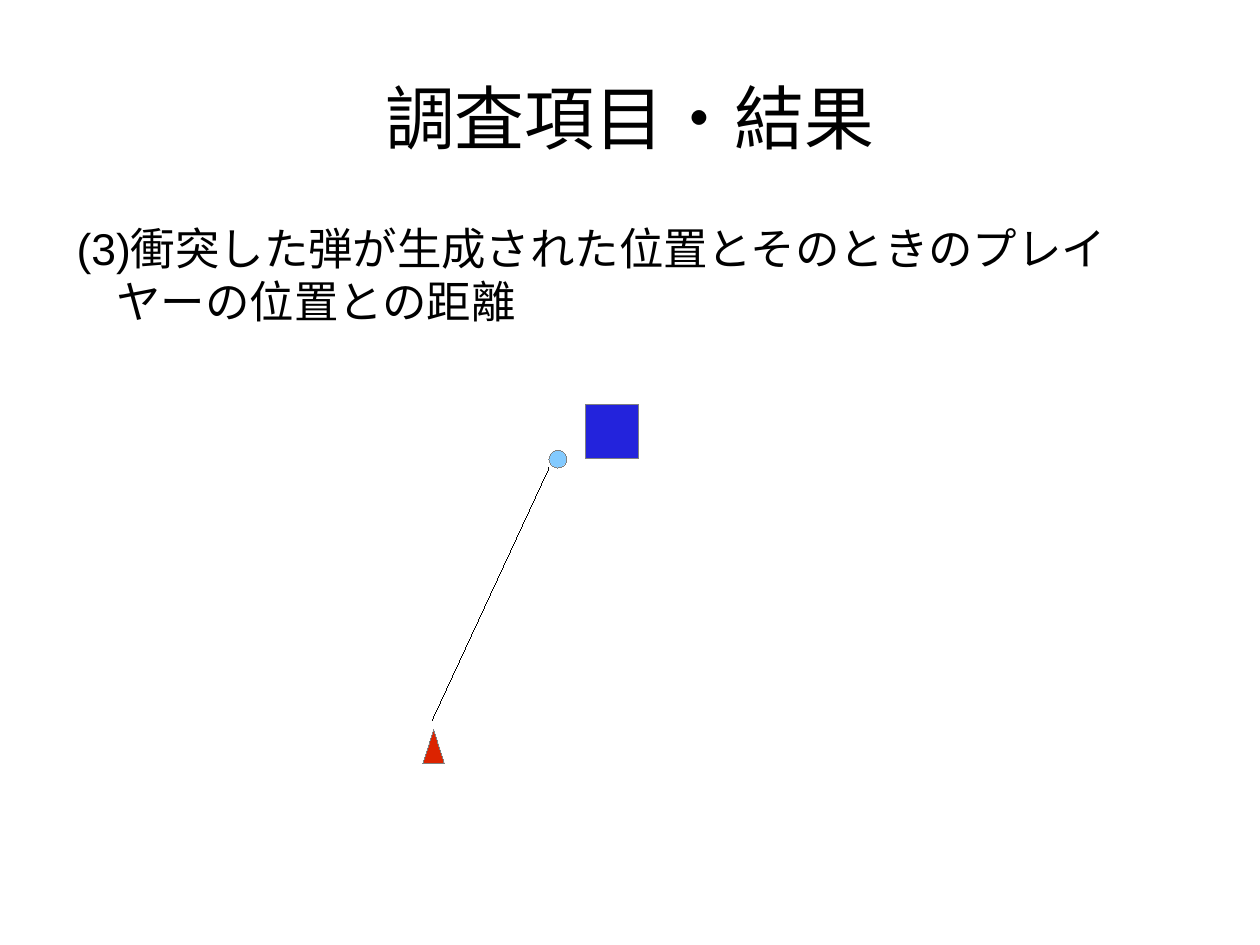
from dataclasses import dataclass

from lxml import etree
from pptx import Presentation
from pptx import util as u
from pptx.dml.color import RGBColor
from pptx.enum import shapes, text
from pptx.oxml.ns import qn


@dataclass
class Theme:
    font: str = "Arial"
    title: int = 44
    body: int = 28
    ink: str = "000000"
    edge: str = "808080"
    enemy: str = "2323DC"
    bullet: str = "83CAFF"
    player: str = "DC2300"
    hair: int = 0


class Deck:
    def __init__(self, theme, width, height):
        self.theme = theme
        self.prs = Presentation()
        self.prs.slide_width = u.Pt(width)
        self.prs.slide_height = u.Pt(height)
        self.slide = self.prs.slides.add_slide(self.prs.slide_layouts[6])

    def label(self, words, box, size, align, anchor, left=0, first=0, after=0):
        frame = self.slide.shapes.add_textbox(*map(u.Pt, box)).text_frame
        frame.word_wrap = True
        frame.vertical_anchor = anchor
        frame.margin_left = frame.margin_right = u.Pt(0)
        frame.margin_top = frame.margin_bottom = u.Pt(0)
        para = frame.paragraphs[0]
        para.text = words
        para.alignment = align
        para.space_after = u.Pt(after)
        para.font.name = self.theme.font
        para.font.size = u.Pt(size)
        para.font.color.rgb = RGBColor.from_string(self.theme.ink)
        props = para._p.get_or_add_pPr()
        props.set("marL", str(u.Pt(left)))
        props.set("indent", str(u.Pt(first)))
        etree.SubElement(props.find(qn("a:defRPr")), qn("a:ea"),
                         typeface=self.theme.font)

    def stroke(self, shape, color):
        shape.line.color.rgb = RGBColor.from_string(color)
        edge = shape._element.spPr.find(qn("a:ln"))
        edge.set("w", str(u.Pt(self.theme.hair)))

    def figure(self, kind, box, color):
        shape = self.slide.shapes.add_shape(kind, *map(u.Pt, box))
        shape.shadow.inherit = False
        shape.fill.solid()
        shape.fill.fore_color.rgb = RGBColor.from_string(color)
        self.stroke(shape, self.theme.edge)

    def link(self, start, end):
        line = self.slide.shapes.add_connector(
            shapes.MSO_CONNECTOR.STRAIGHT, *map(u.Pt, start + end))
        self.stroke(line, self.theme.ink)
        etree.SubElement(line._element.spPr, qn("a:effectLst"))


def main():
    theme = Theme()
    deck = Deck(theme, 793.7, 595.28)
    kinds = shapes.MSO_SHAPE
    left, width = 39.6, 714.24

    deck.label("調査項目・結果", (left, 23.76, width, 99.36), theme.title,
               text.PP_ALIGN.CENTER, text.MSO_ANCHOR.MIDDLE)
    deck.label("(3)衝突した弾が生成された位置とそのときのプレイ\vヤーの位置との距離",
               (left, 138.96, width, 393.12), theme.body,
               text.PP_ALIGN.LEFT, text.MSO_ANCHOR.TOP,
               left=33.84, first=-25.2, after=14.2)

    deck.figure(kinds.RECTANGLE, (368.5, 255.1, 34, 34), theme.enemy)
    deck.figure(kinds.ISOSCELES_TRIANGLE, (266.4, 459.4, 13.6, 21.6), theme.player)
    deck.figure(kinds.OVAL, (345.8, 283.5, 11.3, 11.3), theme.bullet)
    deck.link((345.8, 294.8), (272.2, 453.6))

    deck.prs.save("out.pptx")


if __name__ == "__main__":
    main()
